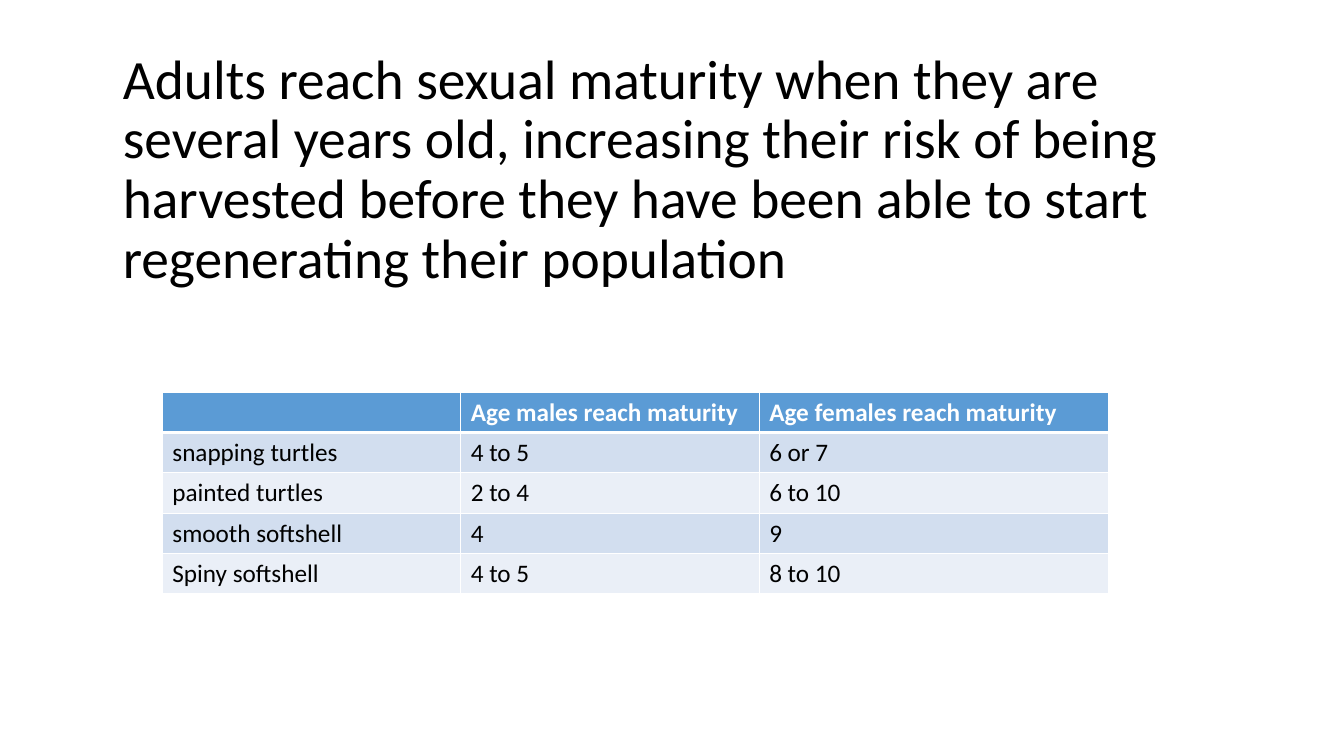
import pptx
import pptx.util
import pptx.dml.color
import pptx.enum.text
import pptx.oxml.ns
import lxml.etree

Inches, Pt = pptx.util.Inches, pptx.util.Pt


def rgb(value):
    return pptx.dml.color.RGBColor.from_string(value)


def add_run(p, text, size, color, bold=False):
    r = p.add_run()
    r.text = text
    r.font.name = "Calibri"
    r.font.size = Pt(size)
    r.font.bold = bold
    r.font.color.rgb = rgb(color)


prs = pptx.Presentation()
prs.slide_width, prs.slide_height = Inches(13.33), Inches(7.5)
s = prs.slides.add_slide(prs.slide_layouts[6])

# Title, lifted by a deep bottom margin
tf = s.shapes.add_textbox(Inches(1.12), Inches(1.27), Inches(11.5), Inches(1.45)).text_frame
tf.word_wrap = True
tf.vertical_anchor = pptx.enum.text.MSO_ANCHOR.MIDDLE
tf.margin_bottom = Inches(0.65)
p = tf.paragraphs[0]
p.line_spacing = 0.9
add_run(p, "Adults reach sexual maturity when they are several years old, "
           "increasing their risk of being harvested before they have been able "
           "to start regenerating their population", 39.6, "000000")

# Table of ages at maturity
rows = [
    ("", "Age males reach maturity", "Age females reach maturity"),
    ("snapping turtles", "4 to 5", "6 or 7"),
    ("painted turtles", "2 to 4", "6 to 10"),
    ("smooth softshell", "4", "9"),
    ("Spiny softshell", "4 to 5", "8 to 10"),
]
widths = [2.96, 2.96, 3.47]
row_height = 0.4
table = s.shapes.add_table(len(rows), len(widths), Inches(1.61), Inches(3.89),
                           Inches(sum(widths)), Inches(row_height * len(rows))).table
for column, width in zip(table.columns, widths):
    column.width = Inches(width)

for i, row in enumerate(rows):
    header = i == 0
    table.rows[i].height = Inches(row_height)
    fill = "5B9BD5" if header else ("EAEFF7", "D2DEEF")[i % 2]
    for j, text in enumerate(row):
        cell = table.cell(i, j)
        cell.fill.solid()
        cell.fill.fore_color.rgb = rgb(fill)
        if text:
            add_run(cell.text_frame.paragraphs[0], text, 18,
                    "FFFFFF" if header else "000000", header)

        # White borders, thick between header and body
        thick = {0: "lnB", 1: "lnT"}.get(i)
        for k, side in enumerate(("lnL", "lnR", "lnT", "lnB")):
            ln = lxml.etree.Element(pptx.oxml.ns.qn("a:" + side),
                                    w=str(Pt(3 if side == thick else 1)))
            solid = lxml.etree.SubElement(ln, pptx.oxml.ns.qn("a:solidFill"))
            lxml.etree.SubElement(solid, pptx.oxml.ns.qn("a:srgbClr"), val="FFFFFF")
            cell._tc.get_or_add_tcPr().insert(k, ln)

prs.save("out.pptx")
